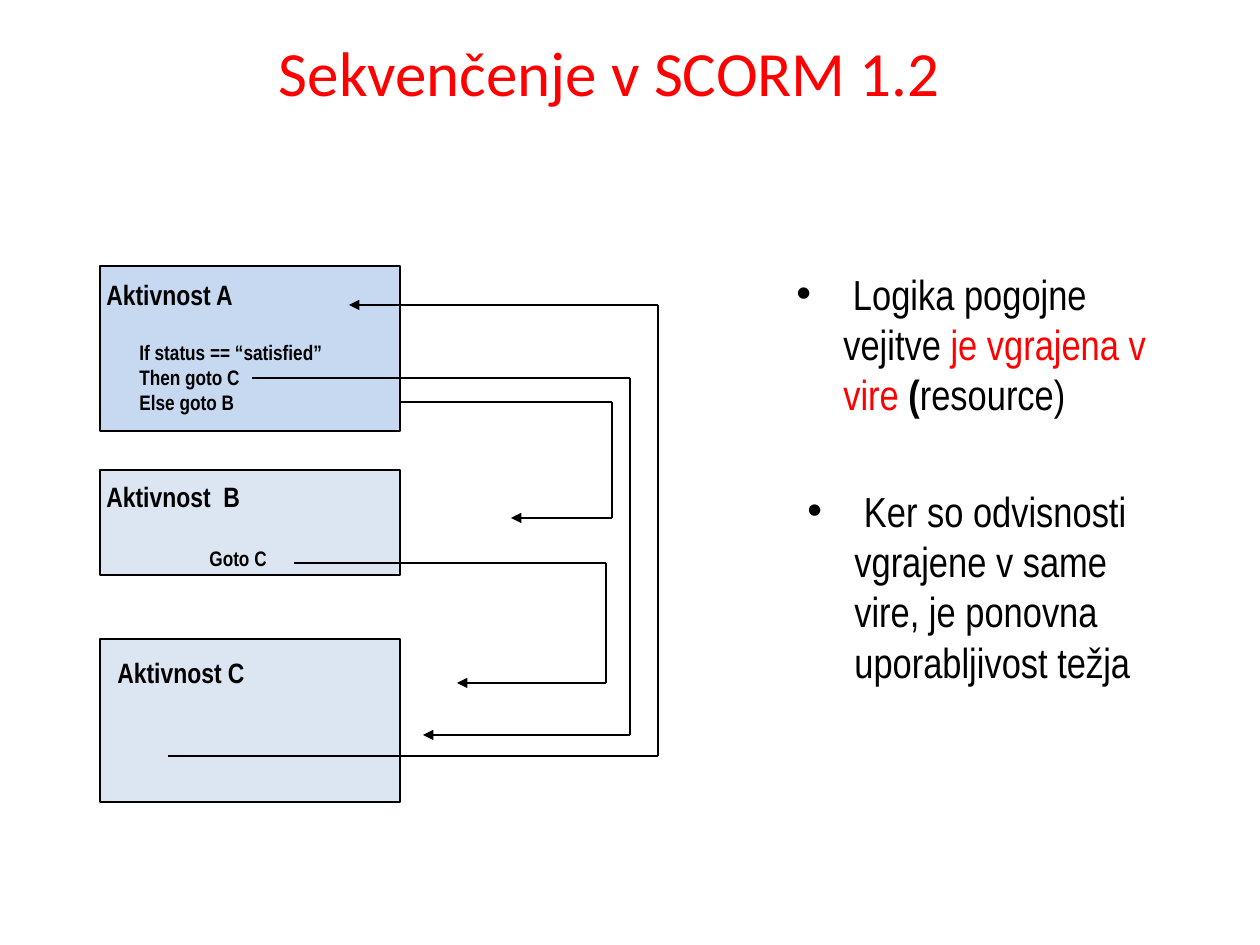
from lxml import etree
from pptx import Presentation
from pptx.dml.color import RGBColor
from pptx.enum.shapes import MSO_CONNECTOR, MSO_SHAPE
from pptx.enum.text import MSO_ANCHOR, PP_ALIGN
from pptx.oxml.ns import qn
from pptx.util import Emu, Pt

BLACK = RGBColor(0x00, 0x00, 0x00)
RED = RGBColor(0xFF, 0x00, 0x00)
BLUE = RGBColor(0xC6, 0xD9, 0xF1)
PALE_BLUE = RGBColor(0xDC, 0xE6, 0xF2)
RECTANGLE = MSO_SHAPE.RECTANGLE
STRAIGHT = MSO_CONNECTOR.STRAIGHT
TOP, MIDDLE = MSO_ANCHOR.TOP, MSO_ANCHOR.MIDDLE
LEFT, CENTER = PP_ALIGN.LEFT, PP_ALIGN.CENTER
NARROW, TITLE_FONT = "Arial Narrow", "Calibri"


def px(length):
    return Emu(round(length * 914400 / 126))


class ActivitySlide:
    """Draws activity boxes, text and routes in one style on a slide."""

    def __init__(self, slide):
        self.shapes = slide.shapes
        self.line_width = Pt(0.75)

    def add_text(self, paragraph, text, size, color=BLACK, bold=False, font=NARROW):
        run = paragraph.add_run()
        run.text = text
        run.font.name = font
        run.font.size = Pt(size)
        run.font.bold = bold
        run.font.color.rgb = color

    def text_frame(self, bounds, wrap=False, anchor=TOP):
        frame = self.shapes.add_textbox(*map(px, bounds)).text_frame
        frame.word_wrap = wrap
        frame.vertical_anchor = anchor
        return frame

    def title(self, bounds, text):
        paragraph = self.text_frame(bounds, True, MIDDLE).paragraphs[0]
        paragraph.alignment = CENTER
        self.add_text(paragraph, text, 36, RED, font=TITLE_FONT)

    def box(self, bounds, color):
        box = self.shapes.add_shape(RECTANGLE, *map(px, bounds))
        box.shadow.inherit = False
        box.fill.solid()
        box.fill.fore_color.rgb = color
        box.line.color.rgb = BLACK
        box.line.width = self.line_width

    def label(self, bounds, lines, size):
        frame = self.text_frame(bounds)
        for index, line in enumerate(lines):
            paragraph = frame.add_paragraph() if index else frame.paragraphs[0]
            paragraph.alignment = LEFT
            self.add_text(paragraph, line, size, bold=True)

    def bullet(self, bounds, runs):
        paragraph = self.text_frame(bounds, True).paragraphs[0]
        for text, color, bold in runs:
            self.add_text(paragraph, text, 24, color, bold)
        properties = paragraph._p.get_or_add_pPr()
        properties.set("marL", str(px(47)))
        properties.set("indent", str(-px(47)))
        etree.SubElement(properties, qn("a:buFont"), typeface="Arial")
        etree.SubElement(properties, qn("a:buChar"), char="•")

    def segment(self, start, end, arrow):
        segment = self.shapes.add_connector(STRAIGHT, *map(px, start + end))
        segment.line.color.rgb = BLACK
        segment.line.width = self.line_width
        if arrow:
            etree.SubElement(segment.line._get_or_add_ln(), qn("a:tailEnd"), type="triangle")
        etree.SubElement(segment._element.spPr, qn("a:effectLst"))

    def route(self, start, bend_x, end):
        points = [start, (bend_x, start[1]), (bend_x, end[1]), end]
        for begin, finish in zip(points, points[1:]):
            self.segment(begin, finish, finish == end)


def main():
    deck = Presentation()
    deck.slide_width, deck.slide_height = px(1260), px(945)
    page = ActivitySlide(deck.slides.add_slide(deck.slide_layouts[6]))

    page.title((64, 45, 1091, 53), "Sekvenčenje v SCORM 1.2")

    activities = [
        ("Aktivnost C", 639, 163, PALE_BLUE, (105, 649)),
        ("Aktivnost  B", 470, 105, PALE_BLUE, (94, 473)),
        ("Aktivnost A", 266, 165, BLUE, (94, 271)),
    ]
    for name, top, height, color, name_corner in activities:
        page.box((100, top, 300, height), color)
        page.label((*name_corner, 160, 47), [name], 16)
    page.label((197, 539, 83, 38), ["Goto C"], 12)
    page.label((127, 333, 208, 88),
               ["If status == “satisfied”", "Then goto C", "Else goto B"], 12)

    routes = [
        ((252, 378), 630, (423, 735)),
        ((168, 756), 658, (349, 305)),
        ((400, 402), 612, (511, 518)),
        ((294, 563), 606, (457, 683)),
    ]
    for start, bend_x, end in routes:
        page.route(start, bend_x, end)

    page.bullet((784, 262, 410, 217), [
        (" Logika pogojne vejitve ", BLACK, False),
        ("je vgrajena v vire ", RED, False),
        ("(", BLACK, True),
        ("resource)", BLACK, False),
    ])
    page.bullet((795, 479, 359, 217), [
        (" Ker so odvisnosti vgrajene v same vire, je ponovna uporabljivost težja",
         BLACK, False),
    ])
    deck.save("out.pptx")


if __name__ == "__main__":
    main()
